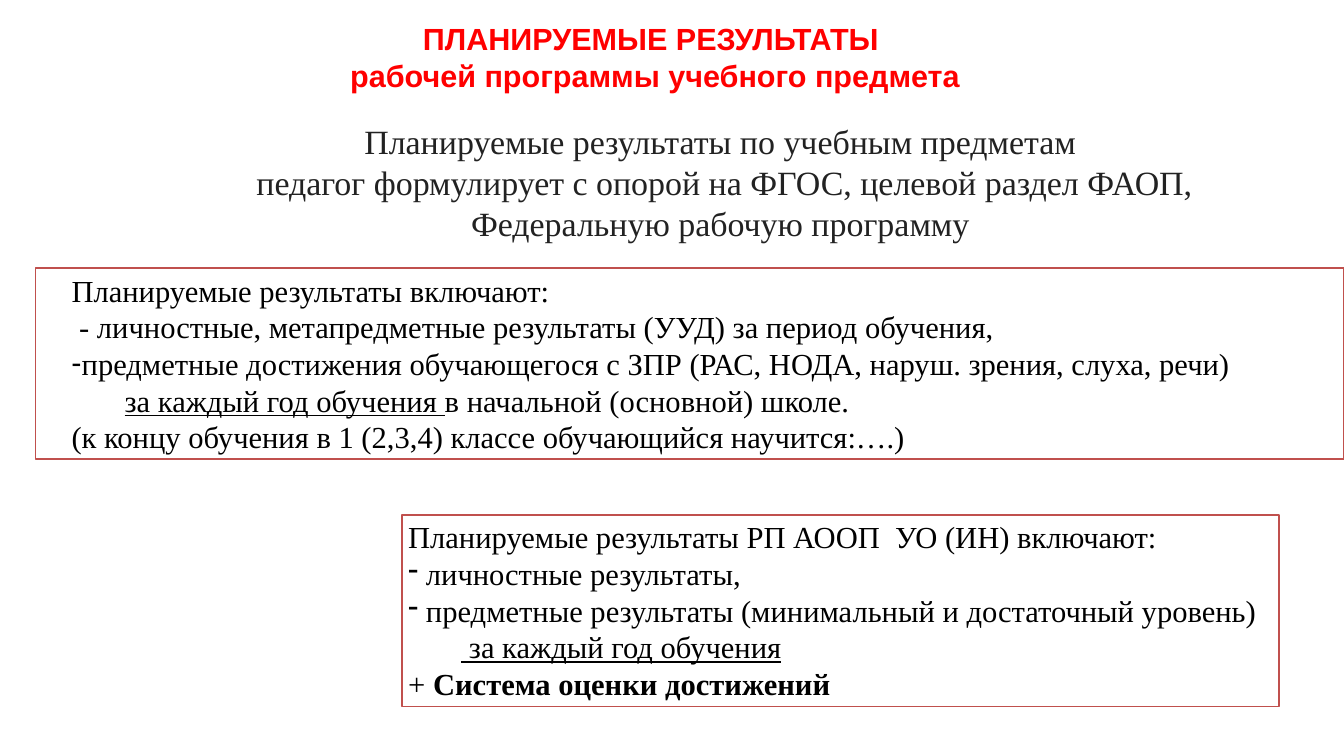
from lxml.etree import SubElement
from pptx import Presentation
from pptx.dml.color import RGBColor
from pptx.enum.shapes import MSO_SHAPE
from pptx.enum.text import MSO_ANCHOR as ANCHOR, MSO_AUTO_SIZE as AUTO_SIZE, PP_ALIGN as ALIGN
from pptx.oxml.ns import qn
from pptx.util import Inches, Pt

RED = RGBColor(0xFF, 0x00, 0x00)
GRAPHITE = RGBColor(0x22, 0x22, 0x22)
BLACK = RGBColor(0x00, 0x00, 0x00)
WHITE = RGBColor(0xFF, 0xFF, 0xFF)
BRICK = RGBColor(0xC0, 0x50, 0x4D)
SERIF = "Times New Roman"
SANS = "Arial"
PHRASE_INDENT = 0.87


class ResultsSlide:
    """Holds the text style and the current slide."""

    def __init__(self, deck):
        self.slide = deck.slides.add_slide(deck.slide_layouts[1])

    def place(self, shape, left, top, width, height, anchor=ANCHOR.TOP):
        """Positions a shape and returns its prepared text frame."""
        shape.left, shape.top = Inches(left), Inches(top)
        shape.width, shape.height = Inches(width), Inches(height)
        frame = shape.text_frame
        frame.word_wrap = True
        frame.auto_size = AUTO_SIZE.NONE
        frame.vertical_anchor = anchor
        return frame

    def outline(self, shape):
        """Gives a box its white fill and brick border."""
        shape.shadow.inherit = False
        shape.fill.solid()
        shape.fill.fore_color.rgb = WHITE
        shape.line.color.rgb = BRICK
        shape.line.width = Pt(2)

    def fill_text(self, frame, lines, align, font=SERIF, size=36, color=BLACK, bold=False, indent=0):
        """Fills a frame with lines of (runs, bulleted, extra indent)."""
        for index, (runs, bulleted, extra) in enumerate(lines):
            line = frame.paragraphs[0] if index == 0 else frame.add_paragraph()
            props = line._p.get_or_add_pPr()
            props.set("marL", "0")
            props.set("indent", str(Inches(indent + extra)))
            if bulleted:
                SubElement(props, qn("a:buFontTx"))
                SubElement(props, qn("a:buChar")).set("char", "-")
            else:
                SubElement(props, qn("a:buNone"))
            line.alignment = align
            line.space_before = Pt(0)
            line.font.name, line.font.size = font, Pt(size)
            line.font.color.rgb, line.font.bold = color, bold
            for text, mark in runs:
                run = line.add_run()
                run.text = text
                if mark == "underline":
                    run.font.underline = True
                elif mark == "bold":
                    run.font.bold = True

    def heading(self, box, lines):
        """Sets the title."""
        frame = self.place(self.slide.shapes.title, *box)
        self.fill_text(frame, lines, ALIGN.CENTER, font=SANS, color=RED, bold=True)

    def intro(self, box, lines):
        """Adds the centred introduction."""
        frame = self.place(self.slide.shapes.add_textbox(0, 0, 0, 0), *box)
        self.fill_text(frame, lines, ALIGN.CENTER, size=40, color=GRAPHITE)

    def main_list(self, box, lines):
        """Sets the framed list in the body placeholder."""
        body = self.slide.placeholders[1]
        self.outline(body)
        frame = self.place(body, *box, anchor=ANCHOR.MIDDLE)
        self.fill_text(frame, lines, ALIGN.JUSTIFY, indent=0.49)

    def side_list(self, box, lines):
        """Adds the second framed list."""
        panel = self.slide.shapes.add_shape(MSO_SHAPE.RECTANGLE, 0, 0, 0, 0)
        self.outline(panel)
        self.fill_text(self.place(panel, *box), lines, ALIGN.LEFT)


def plain(text, bulleted=False):
    """Returns a line made of one unmarked run."""
    return [(text, None)], bulleted, 0


def main():
    """Builds and saves the slide."""
    deck = Presentation()
    deck.slide_width, deck.slide_height = Inches(21.99), Inches(12.37)
    results = ResultsSlide(deck)
    results.heading((5.58, 0.28, 10.28, 1.31), [
        plain("ПЛАНИРУЕМЫЕ РЕЗУЛЬТАТЫ "),
        plain("рабочей программы учебного предмета"),
    ])
    results.intro((3.16, 1.93, 17.25, 2.12), [
        plain("Планируемые результаты по учебным предметам"),
        plain(" педагог формулирует с опорой на ФГОС, целевой раздел ФАОП, "
              "Федеральную рабочую программу"),
    ])
    results.main_list((0.58, 4.38, 21.41, 3.13), [
        plain("Планируемые результаты включают:"),
        plain(" - личностные, метапредметные результаты (УУД) за период обучения, "),
        plain("предметные достижения обучающегося с ЗПР "
              "(РАС, НОДА, наруш. зрения, слуха, речи)", bulleted=True),
        ([("за каждый год обучения ", "underline"),
          ("в начальной (основной) школе. ", None)], False, PHRASE_INDENT),
        plain("(к концу обучения в 1 (2,3,4) классе обучающийся научится:….)"),
    ])
    results.side_list((6.58, 8.43, 14.35, 3.13), [
        plain("Планируемые результаты РП АООП  УО (ИН) включают:"),
        plain(" личностные результаты,", bulleted=True),
        plain(" предметные результаты (минимальный и достаточный уровень)", bulleted=True),
        ([(" за каждый год обучения", "underline")], False, PHRASE_INDENT),
        ([("+ ", None), ("Система оценки достижений", "bold")], False, 0),
    ])
    deck.save("out.pptx")


if __name__ == "__main__":
    main()
